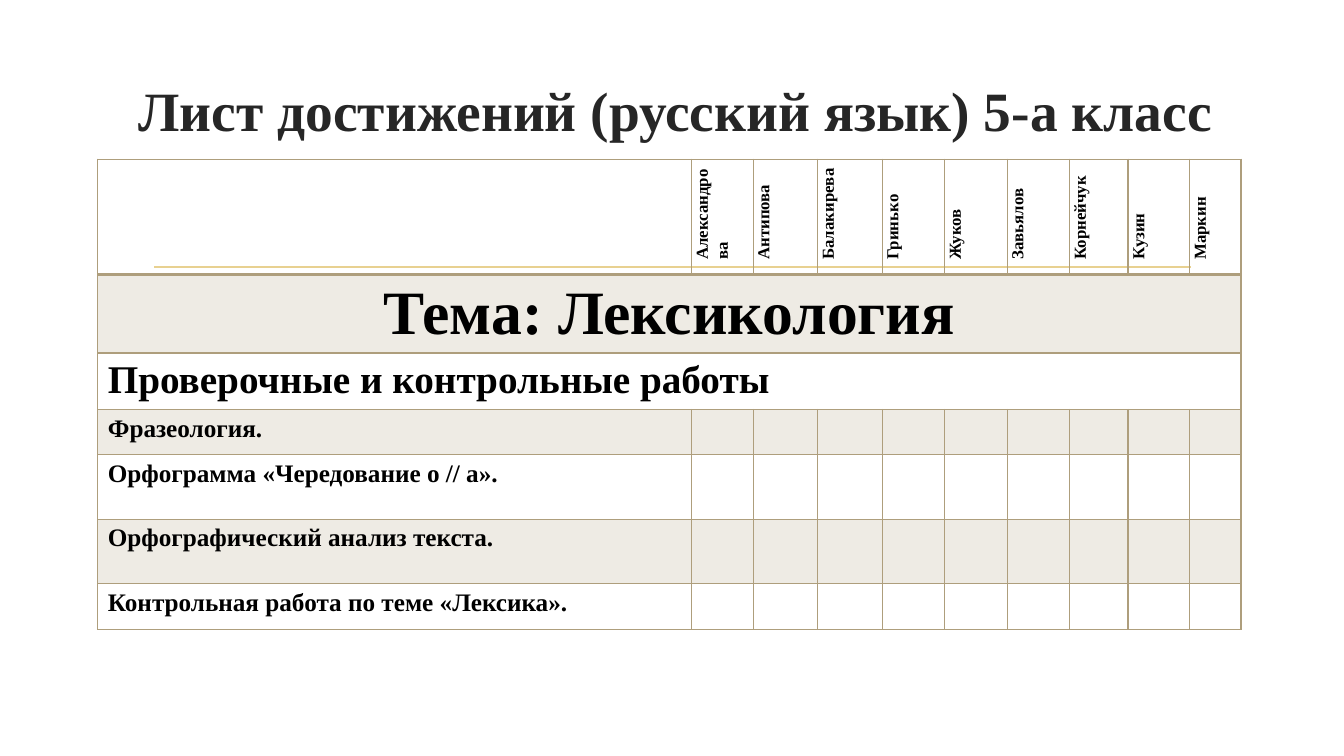
"""Build the achievement sheet slide for the Russian language class."""
from pptx import Presentation
from pptx.dml.color import RGBColor
from pptx.enum.shapes import MSO_CONNECTOR as CONN
from pptx.enum.text import MSO_ANCHOR as ANCHOR, MSO_AUTO_SIZE as AUTO, PP_ALIGN as ALIGN
from pptx.oxml.ns import qn
from pptx.util import Inches, Pt
from lxml.etree import SubElement

TAN = "AE9E7C"
PUPILS = ["Александрова", "Антипова", "Балакирева", "Гринько", "Жуков",
          "Завьялов", "Корнейчук", "Кузин", "Маркин"]
ROWS = [("", 18, 1.08), ("Тема: Лексикология", 44, 0.76),
        ("Проверочные и контрольные работы", 28, 0.56),
        ("Фразеология.", 18, 0.45),
        ("Орфограмма «Чередование о // а».", 18, 0.64),
        ("Орфографический анализ текста.", 18, 0.64),
        ("Контрольная работа по теме «Лексика».", 18, 0.45)]
WIDTHS = [5.89, 0.61, 0.64, 0.64, 0.62, 0.62, 0.62, 0.58, 0.61, 0.51]


def rgb(color):
    return RGBColor.from_string(color)


def add_run(p, text, size, color="000000"):
    r = p.add_run()
    r.text = text
    r.font.name = "Times New Roman"
    r.font.size = Pt(size)
    r.font.bold = True
    r.font.color.rgb = rgb(color)


prs = Presentation()
prs.slide_width, prs.slide_height = Inches(13.33), Inches(7.5)
s = prs.slides.add_slide(prs.slide_layouts[5])

line = s.shapes.add_connector(CONN.STRAIGHT, Inches(1.53), Inches(2.65),
                              Inches(11.81), Inches(2.65))
line.line.color.rgb = rgb("E8D191")
line.line.width = Pt(1.25)
SubElement(line._element.spPr, qn("a:effectLst"))

title = s.shapes.title
title.left, title.top = Inches(1.1), Inches(0.72)
title.width, title.height = Inches(11.2), Inches(0.73)
tf = title.text_frame
tf.auto_size = AUTO.NONE
tf.word_wrap = True
tf.vertical_anchor = ANCHOR.MIDDLE
p = tf.paragraphs[0]
p.alignment = ALIGN.CENTER
add_run(p, "Лист достижений (русский язык) 5-а класс", 39.6, "262626")

table = s.shapes.add_table(len(ROWS), len(WIDTHS), Inches(0.97), Inches(1.58),
                           Inches(11.32), Inches(4.67)).table
table.first_row = table.horz_banding = False
for column, width in zip(table.columns, WIDTHS):
    column.width = Inches(width)

for i, (text, size, height) in enumerate(ROWS):
    table.rows[i].height = Inches(height)
    for j in range(len(WIDTHS)):
        cell = table.cell(i, j)
        tcPr = cell._tc.get_or_add_tcPr()
        for side in ("lnL", "lnR", "lnT", "lnB"):
            weight = 2 if i == 0 and side == "lnB" else 1
            ln = SubElement(tcPr, qn(f"a:{side}"), w=str(Pt(weight)))
            SubElement(SubElement(ln, qn("a:solidFill")), qn("a:srgbClr"), val=TAN)
        if i % 2:
            cell.fill.solid()
            cell.fill.fore_color.rgb = rgb(TAN)
            SubElement(tcPr.find(qn("a:solidFill"))[0], qn("a:alpha"), val="20000")
        else:
            cell.fill.background()
    if text:
        p = table.cell(i, 0).text_frame.paragraphs[0]
        p.alignment = ALIGN.CENTER if i == 1 else ALIGN.LEFT
        add_run(p, text, size)

for i in (1, 2):
    table.cell(i, 0).merge(table.cell(i, len(WIDTHS) - 1))

for j, name in enumerate(PUPILS, 1):
    cell = table.cell(0, j)
    cell.margin_left = cell.margin_right = Inches(0.07)
    cell.margin_top = cell.margin_bottom = 0
    cell._tc.tcPr.set("vert", "vert270")
    p = cell.text_frame.paragraphs[0]
    p.alignment = ALIGN.JUSTIFY
    p.line_spacing = 1.07
    p._p.get_or_add_pPr().set("marL", str(Inches(0.08)))
    add_run(p, name, 12)

prs.save("out.pptx")
